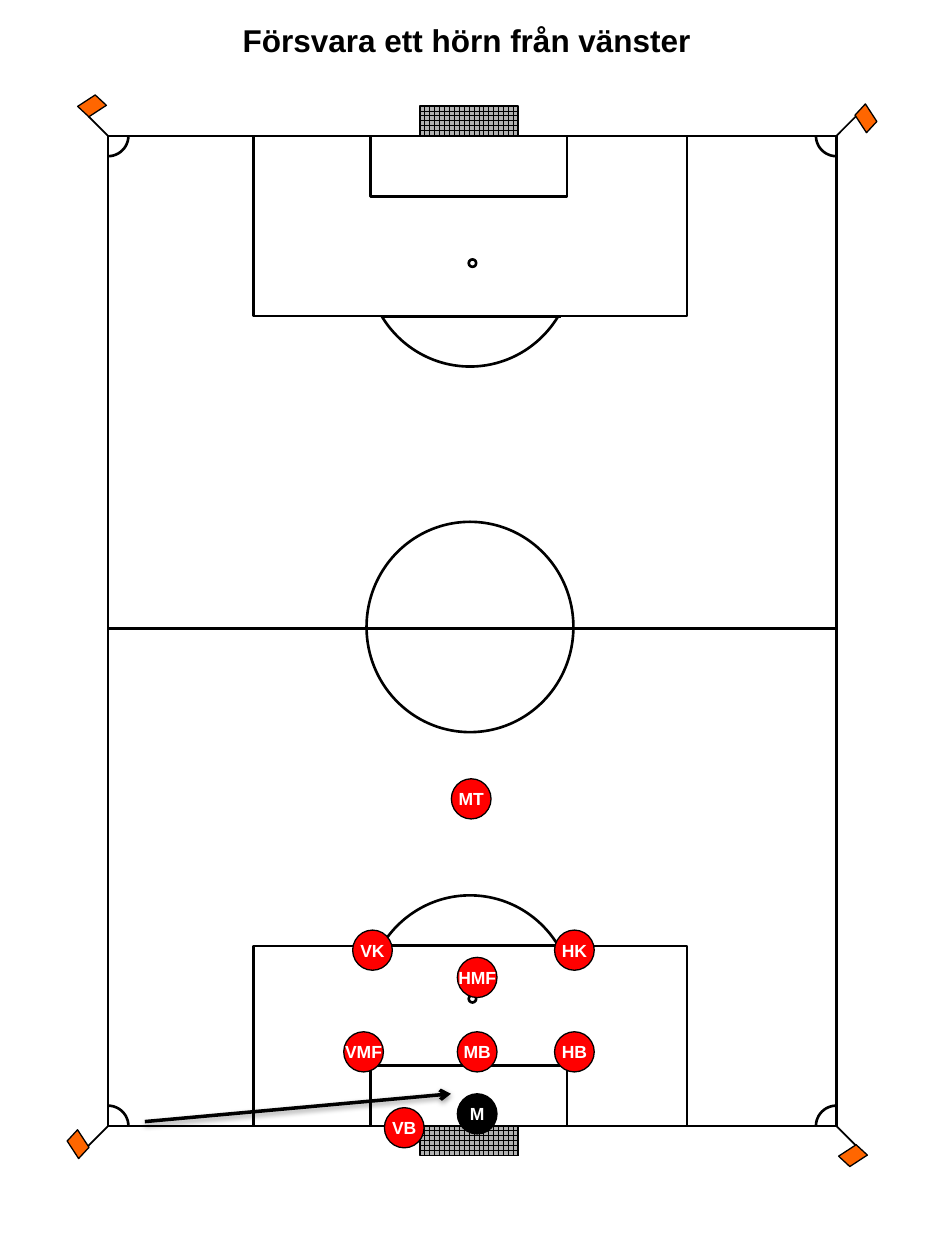
import math
import pptx
import pptx.util
import pptx.dml.color
import pptx.enum.dml
import pptx.enum.shapes
import pptx.enum.text
import pptx.oxml
import pptx.oxml.ns

Cm, Pt = pptx.util.Cm, pptx.util.Pt
Kind = pptx.enum.shapes.MSO_SHAPE
Align = pptx.enum.text.PP_ALIGN
Anchor = pptx.enum.text.MSO_ANCHOR


class Theme:
    black = pptx.dml.color.RGBColor.from_string("000000")
    white = pptx.dml.color.RGBColor.from_string("FFFFFF")
    red = pptx.dml.color.RGBColor.from_string("FF0000")
    flag = pptx.dml.color.RGBColor.from_string("FF6600")
    net = pptx.dml.color.RGBColor.from_string("B2B2B2")
    font = "Arial"
    head = Pt(18)
    label = Pt(10)
    bold = Pt(1.5)
    thin = Pt(0.75)
    pole = Pt(1)
    pass_line = Pt(2)


def style(shape, fill, width):
    shape.shadow.inherit = False
    if fill is None:
        shape.fill.background()
    else:
        shape.fill.solid()
        shape.fill.fore_color.rgb = fill
    shape.line.color.rgb = Theme.black
    shape.line.width = width
    return shape


def draw_line(shapes, x1, y1, x2, y2, width):
    link = shapes.add_connector(pptx.enum.shapes.MSO_CONNECTOR.STRAIGHT,
                                Cm(x1), Cm(y1), Cm(x2), Cm(y2))
    link.line.color.rgb = Theme.black
    link.line.width = width
    props = link._element.spPr
    props.append(pptx.oxml.parse_xml(
        "<a:effectLst %s/>" % pptx.oxml.ns.nsdecls("a")))
    return props


deck = pptx.Presentation()
deck.slide_width, deck.slide_height = Cm(19.05), Cm(25.4)
slide = deck.slides.add_slide(deck.slide_layouts[5])

# Title
title = slide.shapes.title
title.left, title.top = Cm(4.47), Cm(0.3)
title.width, title.height = Cm(9.88), Cm(1.02)
frame = title.text_frame
frame.text = "Försvara ett hörn från vänster"
frame.word_wrap = False
frame.auto_size = pptx.enum.text.MSO_AUTO_SIZE.SHAPE_TO_FIT_TEXT
frame.vertical_anchor = Anchor.TOP
para = frame.paragraphs[0]
para.alignment = Align.CENTER
para.font.name, para.font.size = Theme.font, Theme.head
para.font.bold = True
para.font.color.rgb = Theme.black

# Pitch outline
left, top, right, base = 2.18, 2.74, 16.86, 22.7
pitch = slide.shapes.add_group_shape().shapes
style(pitch.add_shape(Kind.RECTANGLE, Cm(left), Cm(top),
                      Cm(right - left), Cm(base - top)), None, Theme.bold)

# Corner arcs: corner and start angle, clockwise from the right
radius, steps = 0.41, 12
for x, y, start in [(left, base, 270), (right, base, 180),
                    (right, top, 90), (left, top, 0)]:
    dots = []
    for step in range(steps + 1):
        turn = math.radians(start + 90 * step / steps)
        dots.append((Cm(x + radius * math.cos(turn)),
                     Cm(y + radius * math.sin(turn))))
    arc = pitch.build_freeform(*dots[0])
    arc.add_line_segments(dots[1:], close=False)
    style(arc.convert_to_shape(), None, Theme.bold)

# Centre circle and halfway line
style(pitch.add_shape(Kind.OVAL, Cm(7.39), Cm(10.52), Cm(4.17), Cm(4.24)),
      None, Theme.bold)
draw_line(pitch, left, 12.67, right, 12.67, Theme.bold)

# Goals
for y in (1.45, 22):
    goal = pitch.add_shape(Kind.RECTANGLE, Cm(9.15), Cm(y), Cm(0.61), Cm(1.98))
    style(goal, Theme.net, Theme.thin)
    goal.rotation = 270
    goal.fill.patterned()
    goal.fill.pattern = pptx.enum.dml.MSO_PATTERN.LARGE_GRID
    goal.fill.fore_color.rgb = Theme.black
    goal.fill.back_color.rgb = Theme.net

# Corner flags: corner, pole direction, cloth place and turn
for x, y, dx, dy, fx, fy, turn in [
        (left, base, -1, 1, 1.37, 22.86, 312.8),
        (right, base, 1, 1, 16.99, 23.09, 222.8),
        (right, top, 1, -1, 17.25, 2.18, 132.8),
        (left, top, -1, -1, 1.65, 1.93, 42.8)]:
    draw_line(pitch, x, y, x + 0.4 * dx, y + 0.4 * dy, Theme.pole)
    cloth = pitch.add_shape(Kind.PARALLELOGRAM, Cm(fx), Cm(fy),
                            Cm(0.41), Cm(0.41))
    style(cloth, Theme.flag, Theme.thin).rotation = turn

# Penalty areas, the lower one mirrored from the upper one
parts = [(Kind.OVAL, 7.39, 3.15, 4.17, 4.24),
         (None, 7.72, 6.38, 3.58, 0),
         (Kind.RECTANGLE, 5.11, top, 8.74, 3.63),
         (Kind.RECTANGLE, 7.47, top, 3.96, 1.22),
         (Kind.OVAL, 9.45, 5.23, 0.15, 0.15)]
for lower in (True, False):
    for kind, x, y, wide, high in parts:
        if lower:
            y = top + base - y - high
        if kind is None:
            draw_line(pitch, x, y, x + wide, y, Theme.bold)
        else:
            style(pitch.add_shape(kind, Cm(x), Cm(y), Cm(wide), Cm(high)),
                  Theme.white, Theme.bold)

# Players
for name, x, y in [("M", 9.22, 22.05), ("MT", 9.1, 15.7), ("VB", 7.75, 22.33),
                   ("HB", 11.18, 20.8), ("VMF", 6.93, 20.8),
                   ("HMF", 9.22, 19.3), ("MB", 9.22, 20.8),
                   ("VK", 7.11, 18.75), ("HK", 11.18, 18.75)]:
    disc = slide.shapes.add_shape(Kind.OVAL, Cm(x), Cm(y), Cm(0.8), Cm(0.81))
    style(disc, Theme.black if name == "M" else Theme.red, Theme.thin)
    frame = disc.text_frame
    frame.text = name
    frame.word_wrap = False
    frame.vertical_anchor = Anchor.MIDDLE
    para = frame.paragraphs[0]
    para.alignment = Align.CENTER
    para.font.name, para.font.size = Theme.font, Theme.label
    para.font.bold = True
    para.font.color.rgb = Theme.white

# Corner kick with arrowhead and soft shadow
props = draw_line(slide.shapes, 2.92, 22.61, 9.09, 22.05, Theme.pass_line)
space = pptx.oxml.ns.nsdecls("a")
props.find(pptx.oxml.ns.qn("a:ln")).append(
    pptx.oxml.parse_xml('<a:tailEnd %s type="arrow"/>' % space))
props.find(pptx.oxml.ns.qn("a:effectLst")).append(pptx.oxml.parse_xml(
    '<a:outerShdw %s blurRad="40000" dist="20000" dir="5400000" rotWithShape="0">'
    '<a:srgbClr val="%s"><a:alpha val="38000"/></a:srgbClr></a:outerShdw>'
    % (space, Theme.black)))

deck.save("out.pptx")
